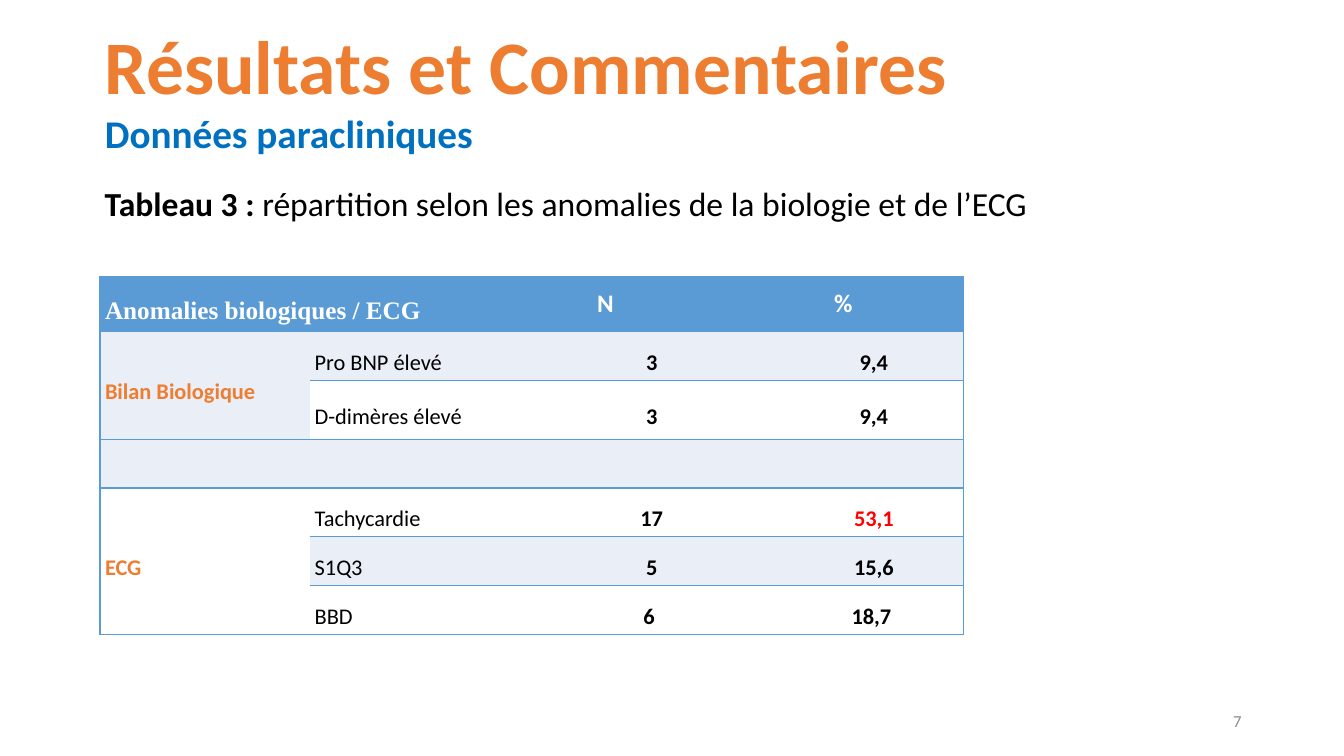
from collections import namedtuple
from dataclasses import dataclass

from lxml import etree
from pptx import Presentation
from pptx import util as u
from pptx.dml.color import RGBColor
from pptx.enum import text
from pptx.oxml import ns

Box = namedtuple("Box", "left top width height")
Entry = namedtuple("Entry", "row column rows columns words")


@dataclass(frozen=True)
class Theme:
    """Colours, typefaces and type sizes of the slide."""
    orange: str = "ED7D31"
    blue: str = "0070C0"
    table_blue: str = "5B9BD5"
    band: str = "EAEFF7"
    white: str = "FFFFFF"
    black: str = "000000"
    red: str = "FF0000"
    grey: str = "8C8C8C"
    sans: str = "Calibri"
    serif: str = "Times New Roman"
    title: int = 54
    subtitle: int = 28
    caption: int = 24
    header: int = 18
    body: int = 16
    number: int = 12


THEME = Theme()
NO_STYLE = "{2D5ABB26-0587-4C30-8999-92F81FD0307C}"
COLUMNS = [149.8, 127.4, 22.3, 145.4, 43.9, 128.2]
ROWS = [39, 34.8, 42.3, 34.8, 34.8, 34.8, 34.8]
HEADINGS = [
    Entry(0, 0, 1, 2, "Anomalies biologiques / ECG"),
    Entry(0, 2, 1, 2, "N"),
    Entry(0, 4, 1, 2, "%"),
]
GROUPS = [
    Entry(1, 0, 2, 1, "Bilan Biologique"),
    Entry(3, 0, 1, 6, ""),
    Entry(4, 0, 3, 1, "ECG"),
]
FINDINGS = {
    1: ("Pro BNP élevé", "3", "9,4"),
    2: ("D-dimères élevé", "3", "9,4"),
    4: ("Tachycardie", "17", "53,1"),
    5: ("S1Q3", "5", "15,6"),
    6: ("BBD", "6 ", "18,7 "),
}


def style_font(font, size, colour, bold=False, name=THEME.sans):
    """Set typeface, size, colour and weight of a font."""
    font.name, font.size, font.bold = name, u.Pt(size), bold
    font.color.rgb = RGBColor.from_string(colour)


def place(shape, box):
    """Move a shape to a box given in points."""
    shape.left, shape.top, shape.width, shape.height = map(u.Pt, box)


def add_heading(page, box):
    """Fill the title placeholder with the title and subtitle."""
    place(page.shapes.title, box)
    frame = page.shapes.title.text_frame
    frame.text = "Résultats et Commentaires\nDonnées paracliniques"
    frame.vertical_anchor = text.MSO_ANCHOR.TOP
    frame.auto_size = text.MSO_AUTO_SIZE.NONE
    looks = [(THEME.title, THEME.orange), (THEME.subtitle, THEME.blue)]
    for para, (size, colour) in zip(frame.paragraphs, looks):
        para.alignment = text.PP_ALIGN.LEFT
        para.line_spacing = 1.0
        para.space_before = u.Pt(0)
        style_font(para.font, size, colour, True)


def add_caption(page, box):
    """Add the table caption with its bold label."""
    caption = page.shapes.add_textbox(*map(u.Pt, box))
    caption.fill.solid()
    caption.fill.fore_color.rgb = RGBColor.from_string(THEME.white)
    caption.text_frame.word_wrap = True
    para = caption.text_frame.paragraphs[0]
    style_font(para.font, THEME.caption, THEME.black)
    label = para.add_run()
    label.text = "Tableau 3 :"
    label.font.bold = True
    para.add_run().text = " répartition selon les anomalies de la biologie et de l’ECG"


def add_border(cell, side):
    """Draw one side (L, R, T or B) of a table cell."""
    line = etree.SubElement(cell._tc.get_or_add_tcPr(), ns.qn(f"a:ln{side}"), w=str(u.Pt(1)))
    fill = etree.SubElement(line, ns.qn("a:solidFill"))
    etree.SubElement(fill, ns.qn("a:srgbClr"), val=THEME.table_blue)


def fill_cell(table, entry, colour, **look):
    """Merge, border, fill and write one table entry."""
    cell = table.cell(entry.row, entry.column)
    last_column = entry.column + entry.columns - 1
    if entry.rows * entry.columns > 1:
        cell.merge(table.cell(entry.row + entry.rows - 1, last_column))
    if entry.column == 0:
        add_border(cell, "L")
    if last_column == len(COLUMNS) - 1:
        add_border(cell, "R")
    add_border(cell, "T")
    add_border(cell, "B")
    banding = THEME.band if entry.row % 2 else THEME.white
    cell.fill.solid()
    cell.fill.fore_color.rgb = RGBColor.from_string(THEME.table_blue if entry.row == 0 else banding)
    cell.margin_left = cell.margin_right = u.Pt(3.6)
    cell.margin_top = cell.margin_bottom = 0
    cell.vertical_anchor = text.MSO_ANCHOR.MIDDLE
    cell.text = entry.words
    para = cell.text_frame.paragraphs[0]
    centred = entry.column > 1
    para.alignment = text.PP_ALIGN.CENTER if centred else text.PP_ALIGN.LEFT
    para.line_spacing = 1.0 if centred and entry.row == 0 else 1.5
    size = THEME.body if entry.row else THEME.header
    style_font(para.font, size, colour, **look)


def add_findings_table(page, box):
    """Add the table of laboratory and ECG anomalies."""
    table = page.shapes.add_table(len(ROWS), len(COLUMNS), *map(u.Pt, box)).table
    table.first_row = table.horz_banding = False
    table._tbl.tblPr.find(ns.qn("a:tableStyleId")).text = NO_STYLE
    for column, width in zip(table.columns, COLUMNS):
        column.width = u.Pt(width)
    for row, height in zip(table.rows, ROWS):
        row.height = u.Pt(height)
    for heading in HEADINGS:
        face = THEME.sans if heading.column else THEME.serif
        fill_cell(table, heading, THEME.white, bold=True, name=face)
    for group in GROUPS:
        fill_cell(table, group, THEME.orange, bold=True)
    for row, (finding, count, share) in FINDINGS.items():
        fill_cell(table, Entry(row, 1, 1, 2, finding), THEME.black)
        fill_cell(table, Entry(row, 3, 1, 2, count), THEME.black, bold=True)
        colour = THEME.red if share == "53,1" else THEME.black
        fill_cell(table, Entry(row, 5, 1, 1, share), colour, bold=True)


def add_page_number(page, box):
    """Add the right-aligned page number."""
    frame = page.shapes.add_textbox(*map(u.Pt, box)).text_frame
    frame.word_wrap = True
    frame.vertical_anchor = text.MSO_ANCHOR.MIDDLE
    para = frame.paragraphs[0]
    para.text = "7"
    para.alignment = text.PP_ALIGN.RIGHT
    style_font(para.font, THEME.number, THEME.grey)


def main():
    """Build the results slide and save it."""
    deck = Presentation()
    deck.slide_width, deck.slide_height = u.Pt(960), u.Pt(540)
    page = deck.slides.add_slide(deck.slide_layouts[5])
    add_findings_table(page, Box(71.4, 197.8, sum(COLUMNS), sum(ROWS)))
    add_caption(page, Box(67.7, 127.4, 764.6, 36))
    add_heading(page, Box(67.7, 10, 824.4, 106.6))
    add_page_number(page, Box(678, 500.5, 216, 28.8))
    deck.save("out.pptx")


if __name__ == "__main__":
    main()
